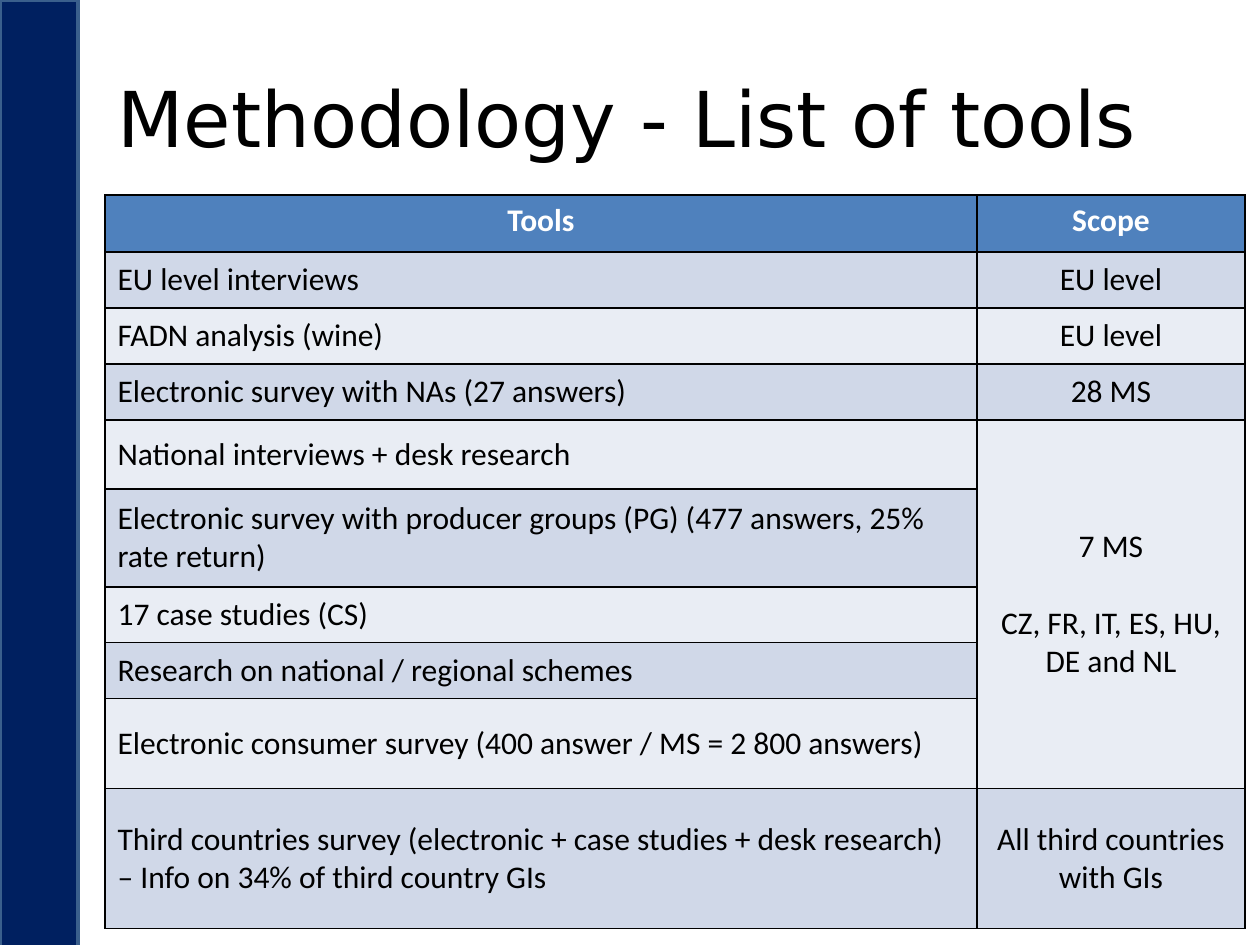
import pptx
import pptx.dml.color
import pptx.enum.shapes
import pptx.enum.text
import pptx.oxml
import pptx.oxml.ns
import pptx.util

EMU_PER_PX = 914400 / 126
COLORS = {
    "bar": "002060",
    "bar_line": "3A5F8C",
    "header": "4F81BD",
    "band_dark": "D0D8E8",
    "band_light": "E9EDF4",
    "text": "000000",
    "header_text": "FFFFFF",
    "border": "000000",
}
ALIGN = pptx.enum.text.PP_ALIGN
ANCHOR = pptx.enum.text.MSO_ANCHOR

HEADERS = ["Tools", "Scope"]
SEVEN_STATES = ["7 MS", "CZ, FR, IT, ES, HU, DE and NL"]
ROWS = [
    (56, "EU level interviews", ["EU level"]),
    (56, "FADN analysis (wine)", ["EU level"]),
    (56, "Electronic survey with NAs (27 answers)", ["28 MS"]),
    (69, "National interviews + desk research", SEVEN_STATES),
    (98, "Electronic survey with producer groups (PG) (477 answers, 25% rate return)", None),
    (56, "17 case studies (CS)", None),
    (56, "Research on national / regional schemes", None),
    (90, "Electronic consumer survey (400 answer / MS = 2 800 answers)", None),
    (140, "Third countries survey (electronic + case studies + desk research) "
          "– Info on 34% of third country GIs", ["All third countries with GIs"]),
]
MERGED_ROWS = (4, 8)


def px(length):
    return pptx.util.Emu(round(length * EMU_PER_PX))


def rgb(name):
    return pptx.dml.color.RGBColor.from_string(COLORS[name])


def write_text(frame, lines, font="Calibri", size=18, color="text", bold=False,
               align=ALIGN.LEFT, gap=0):
    for index, line in enumerate(lines):
        paragraph = frame.add_paragraph() if index else frame.paragraphs[0]
        paragraph.alignment = align
        if index and gap:
            paragraph.space_before = pptx.util.Pt(gap)
        run = paragraph.add_run()
        run.text = line
        run.font.name = font
        run.font.size = pptx.util.Pt(size)
        run.font.bold = bold
        run.font.color.rgb = rgb(color)


class SlideBuilder:
    def __init__(self, presentation):
        self.slide = presentation.slides.add_slide(presentation.slide_layouts[5])

    def bar(self, left, top, width, height):
        shape = self.slide.shapes.add_shape(
            pptx.enum.shapes.MSO_SHAPE.RECTANGLE, px(left), px(top), px(width), px(height))
        shape.shadow.inherit = False
        shape.fill.solid()
        shape.fill.fore_color.rgb = rgb("bar")
        shape.line.color.rgb = rgb("bar_line")
        shape.line.width = pptx.util.Pt(2)

    def title(self, text, left, top, width, height):
        shape = self.slide.shapes.title
        shape.left, shape.top = px(left), px(top)
        shape.width, shape.height = px(width), px(height)
        shape.text_frame.auto_size = pptx.enum.text.MSO_AUTO_SIZE.NONE
        shape.text_frame.vertical_anchor = ANCHOR.MIDDLE
        write_text(shape.text_frame, [text], font="DejaVu Sans", size=44)

    def table(self, left, top, widths, heights):
        frame = self.slide.shapes.add_table(
            len(heights), len(widths), px(left), px(top), px(sum(widths)), px(sum(heights)))
        for column, width in zip(frame.table.columns, widths):
            column.width = px(width)
        for row, height in zip(frame.table.rows, heights):
            row.height = px(height)
        return frame.table

    def cell(self, cell, lines, fill, anchor=ANCHOR.MIDDLE, **text_format):
        properties = cell._tc.get_or_add_tcPr()
        for side in ("lnL", "lnR", "lnT", "lnB"):
            properties.append(pptx.oxml.parse_xml(
                f'<a:{side} {pptx.oxml.ns.nsdecls("a")} w="12700"><a:solidFill>'
                f'<a:srgbClr val="{COLORS["border"]}"/></a:solidFill></a:{side}>'))
        cell.fill.solid()
        cell.fill.fore_color.rgb = rgb(fill)
        cell.vertical_anchor = anchor
        write_text(cell.text_frame, lines, **text_format)


def main():
    presentation = pptx.Presentation()
    presentation.slide_width, presentation.slide_height = px(1260), px(945)
    builder = SlideBuilder(presentation)
    builder.bar(0, 0, 78, 948)
    builder.title("Methodology - List of tools", 105, 38, 1155, 157)

    table = builder.table(105, 195, [872, 268], [57] + [height for height, _, _ in ROWS])
    for column, header in enumerate(HEADERS):
        builder.cell(table.cell(0, column), [header], "header", anchor=ANCHOR.TOP,
                     color="header_text", bold=True, align=ALIGN.CENTER)
    first, last = MERGED_ROWS
    table.cell(first, 1).merge(table.cell(last, 1))
    for row, (_, tool, scope) in enumerate(ROWS, start=1):
        fill = "band_dark" if row % 2 else "band_light"
        builder.cell(table.cell(row, 0), [tool], fill)
        builder.cell(table.cell(row, 1), scope or [], fill, align=ALIGN.CENTER, gap=22)
    presentation.save("out.pptx")


if __name__ == "__main__":
    main()
